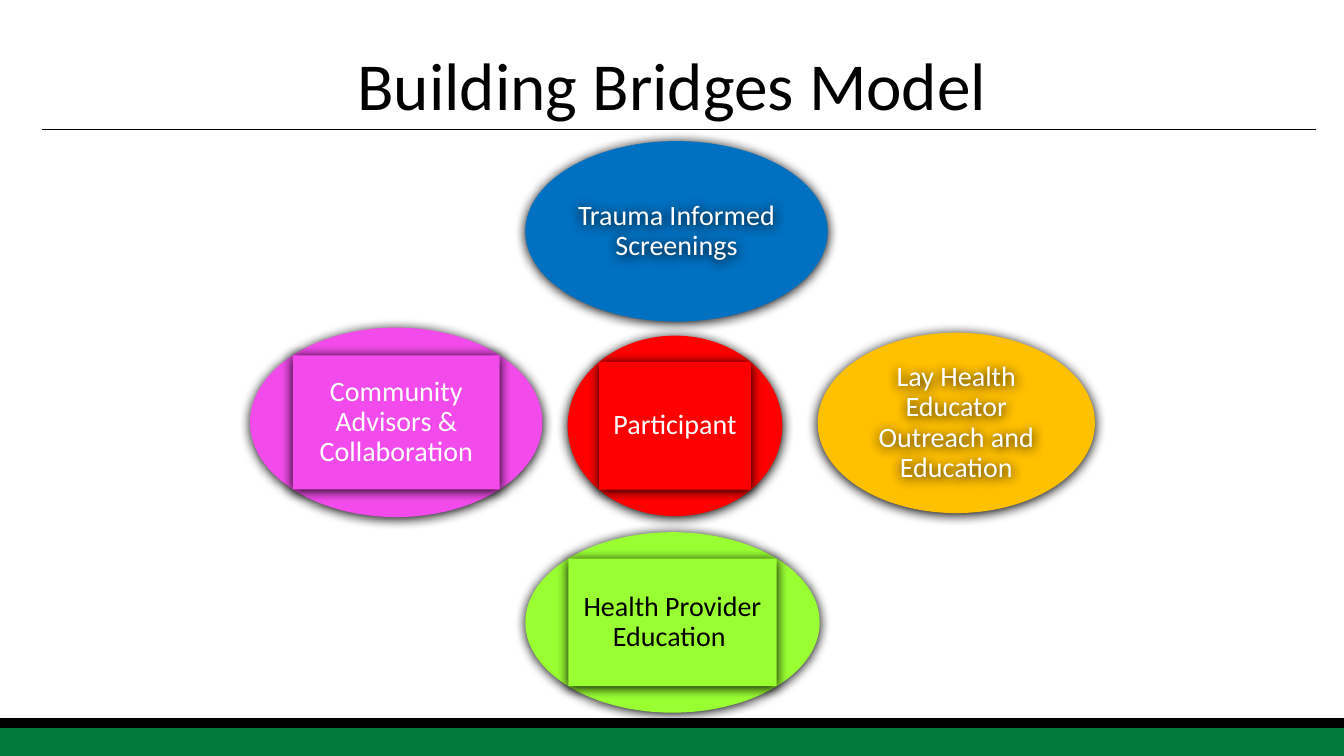
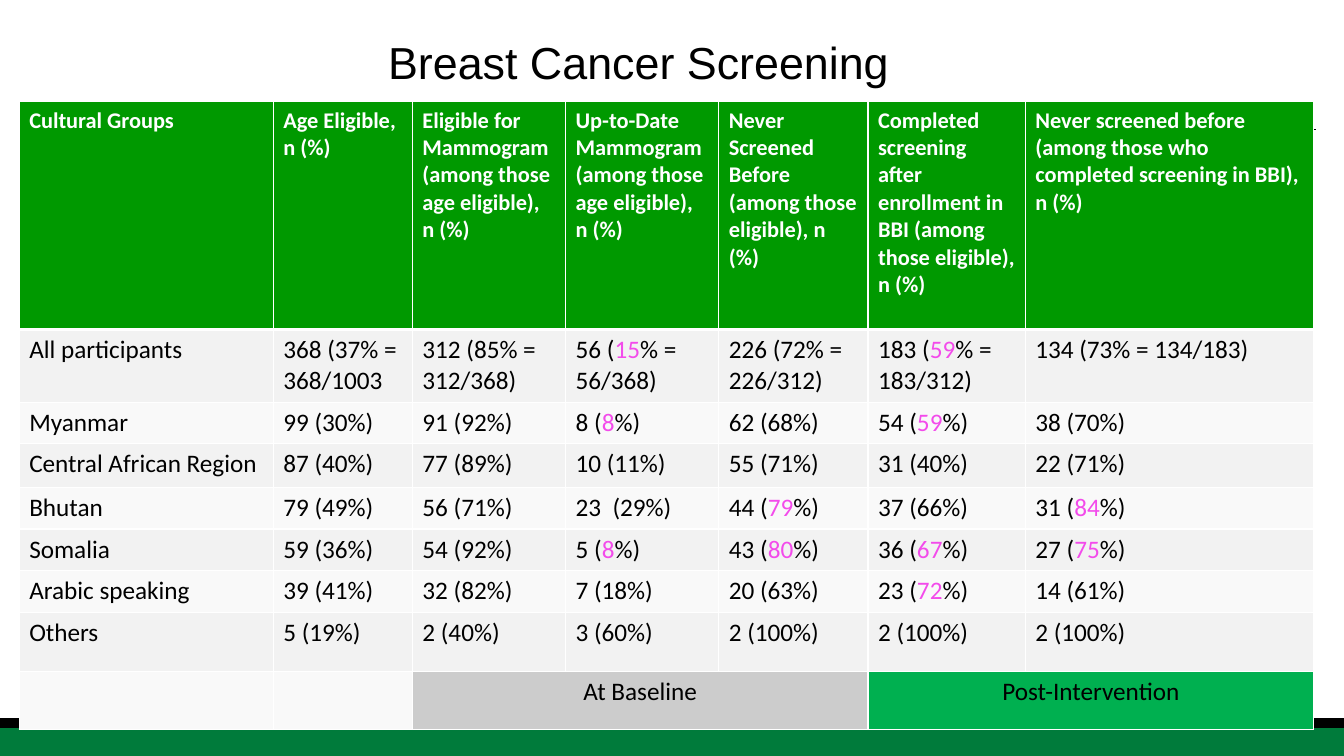
from math import sqrt

from pptx import Presentation
from pptx.dml.color import RGBColor
from pptx.enum.shapes import MSO_CONNECTOR as Connector, MSO_SHAPE as Shape
from pptx.enum.text import MSO_ANCHOR as Anchor, MSO_AUTO_SIZE as AutoSize, PP_ALIGN as Align
from pptx.oxml import parse_xml
from pptx.oxml.ns import nsdecls
from pptx.util import Inches, Pt

COLORS = {
    "white": "FFFFFF", "black": "000000", "band": "007B3B", "header": "009900",
    "blue": "0070C0", "amber": "FFC000", "red": "FF0000", "pink": "F34BEB",
    "lime": "99FF33", "odd": "F2F2F2", "even": "F9F9F9", "baseline": "CCCCCC",
    "post": "00B050",
}

OVALS = [
    ("Trauma Informed Screenings", (5.21, 1.4, 3, 1.79), "blue", "white", False),
    ("Lay Health Educator Outreach and Education", (8.11, 3.3, 2.75, 1.79), "amber", "white", False),
    ("Participant", (5.63, 3.33, 2.13, 1.79), "red", "white", True),
    ("Community Advisors & Collaboration", (2.48, 3.25, 2.9, 1.88), "pink", "white", True),
    ("Health Provider Education ", (5.21, 5.28, 2.92, 1.79), "lime", "black", True),
]

COLUMN_WIDTHS = [2.52, 1.38, 1.52, 1.52, 1.48, 1.56, 2.86]
ROW_HEIGHTS = [2.26, 0.72, 0.41, 0.44, 0.41, 0.41, 0.42, 0.58, 0.58]
SCREENING_ROWS = [
    ["Cultural Groups", "Age Eligible, n (%)",
     "Eligible for Mammogram (among those age eligible), n (%)",
     "Up-to-Date Mammogram (among those age eligible), n (%)",
     "Never Screened Before (among those eligible), n (%)",
     "Completed screening after enrollment in BBI (among those eligible), n (%)",
     "Never screened before (among those who completed screening in BBI), n (%)"],
    ["All participants", "368 (37% = 368/1003", "312 (85% = 312/368)", "56 (*15*% = 56/368)",
     "226 (72% = 226/312)", "183 (*59*% = 183/312)", "134 (73% = 134/183)"],
    ["Myanmar", "99 (30%)", "91 (92%)", "8 (*8*%)", "62 (68%)", "54 (*59*%)", "38 (70%)"],
    ["Central African Region", "87 (40%)", "77 (89%)", "10 (11%)", "55 (71%)", "31 (40%)", "22 (71%)"],
    ["Bhutan", "79 (49%)", "56 (71%)", "23  (29%)", "44 (*79*%)", "37 (66%)", "31 (*84*%)"],
    ["Somalia", "59 (36%)", "54 (92%)", "5 (*8*%)", "43 (*80*%)", "36 (*67*%)", "27 (*75*%)"],
    ["Arabic speaking", "39 (41%)", "32 (82%)", "7 (18%)", "20 (63%)", "23 (*72*%)", "14 (61%)"],
    ["Others", "5 (19%)", "2 (40%)", "3 (60%)", "2 (100%)", "2 (100%)", "2 (100%)"],
]
PHASES = [("At Baseline", 2, 4, "baseline"), ("Post-Intervention", 5, 6, "post")]


def rgb(name):
    return RGBColor.from_string(COLORS[name])


def write(frame, text, size=18, color="black", font="Calibri", bold=False,
          align=Align.LEFT, spacing=None):
    para = frame.paragraphs[0]
    para.alignment = align
    if spacing:
        para.line_spacing = spacing
    for index, part in enumerate(text.split("*")):
        span = para.add_run()
        span.text = part
        span.font.name, span.font.size, span.font.bold = font, Pt(size), bold
        span.font.color.rgb = rgb("pink" if index % 2 else color)


def set_borders(cell, bottom=1):
    properties = cell._tc.get_or_add_tcPr()
    for side, width in (("L", 1), ("R", 1), ("T", 1), ("B", bottom)):
        properties.append(parse_xml(
            f'<a:ln{side} {nsdecls("a")} w="{Pt(width)}"><a:solidFill>'
            f'<a:srgbClr val="{COLORS["white"]}"/></a:solidFill></a:ln{side}>'))


class Builder:
    """Hold the deck's style and the current page."""

    def __init__(self):
        self.deck = Presentation()
        self.deck.slide_width, self.deck.slide_height = Inches(13.33), Inches(7.5)
        self.page = None

    def add_page(self):
        self.page = self.deck.slides.add_slide(self.deck.slide_layouts[6])
        rule = self.page.shapes.add_connector(
            Connector.STRAIGHT, Inches(0.42), Inches(1.28), Inches(13.05), Inches(1.28))
        rule.line.color.rgb, rule.line.width = rgb("black"), Pt(0.5)
        rule._element.spPr.append(parse_xml(f'<a:effectLst {nsdecls("a")}/>'))
        for top, height, color in ((7.22, 0.28, "band"), (7.13, 0.09, "black")):
            band = self.shape(self.page.shapes, Shape.RECTANGLE, (0, top, 13.33, height), color)
            band.line.color.rgb, band.line.width = rgb(color), Pt(1)

    def shape(self, parent, kind, place, color=None, glow=False):
        box = parent.add_shape(kind, *map(Inches, place))
        box.shadow.inherit = False
        box.line.fill.background()
        if color:
            box.fill.solid()
            box.fill.fore_color.rgb = rgb(color)
        else:
            box.fill.background()
        if glow:
            box.shadow._element.effectLst.append(parse_xml(
                f'<a:outerShdw {nsdecls("a")} blurRad="{Pt(8.5)}" dist="{Pt(1)}" dir="5400000" '
                f'algn="ctr" rotWithShape="0"><a:srgbClr val="{COLORS["black"]}"/></a:outerShdw>'))
        return box

    def title(self, text, place, **style):
        box = self.page.shapes.add_textbox(*map(Inches, place))
        box.text_frame.word_wrap = False
        box.text_frame.auto_size = AutoSize.SHAPE_TO_FIT_TEXT
        write(box.text_frame, text, **style)

    def oval(self, text, place, color, text_color, filled_label):
        group = self.page.shapes.add_group_shape().shapes
        self.shape(group, Shape.OVAL, place, color, glow=True)
        left, top, width, height = place
        inset = (1 - 1 / sqrt(2)) / 2
        inner = (left + width * inset, top + height * inset, width / sqrt(2), height / sqrt(2))
        label = self.shape(group, Shape.RECTANGLE, inner, color if filled_label else None, glow=True)
        frame = label.text_frame
        frame.word_wrap, frame.vertical_anchor = True, Anchor.MIDDLE
        frame.margin_left = frame.margin_right = Inches(0.03)
        frame.margin_top = frame.margin_bottom = Inches(0.03)
        write(frame, text, size=20, color=text_color, align=Align.CENTER, spacing=0.9)

    def screening_table(self, left, top):
        table = self.page.shapes.add_table(
            len(ROW_HEIGHTS), len(COLUMN_WIDTHS), Inches(left), Inches(top),
            Inches(sum(COLUMN_WIDTHS)), Inches(sum(ROW_HEIGHTS))).table
        table.first_row = table.horz_banding = False
        for column, width in zip(table.columns, COLUMN_WIDTHS):
            column.width = Inches(width)
        for index, (row, height) in enumerate(zip(table.rows, ROW_HEIGHTS)):
            row.height = Inches(height)
            for cell in row.cells:
                set_borders(cell, bottom=1 if index else 3)
                cell.fill.solid()
                cell.fill.fore_color.rgb = rgb(("odd" if index % 2 else "even") if index else "header")
        for index, texts in enumerate(SCREENING_ROWS):
            style = {} if index else {"size": 16, "color": "white", "bold": True}
            for column, text in enumerate(texts):
                write(table.cell(index, column).text_frame, text, **style)
        last = len(ROW_HEIGHTS) - 1
        for text, first, final, color in PHASES:
            phase = table.cell(last, first)
            phase.merge(table.cell(last, final))
            phase.fill.fore_color.rgb = rgb(color)
            write(phase.text_frame, text, align=Align.CENTER)


def main():
    builder = Builder()
    builder.add_page()
    for oval in OVALS:
        builder.oval(*oval)
    builder.title("Building Bridges Model", (3.41, 0.38, 6.51, 0.91), size=48, align=Align.CENTER)

    builder.add_page()
    builder.screening_table(0.19, 1.01)
    builder.title("Breast Cancer Screening", (3.71, 0.03, 5.21, 0.81), size=32, font="Arial",
                  align=Align.RIGHT, spacing=1.5)
    builder.deck.save("out.pptx")


if __name__ == "__main__":
    main()
